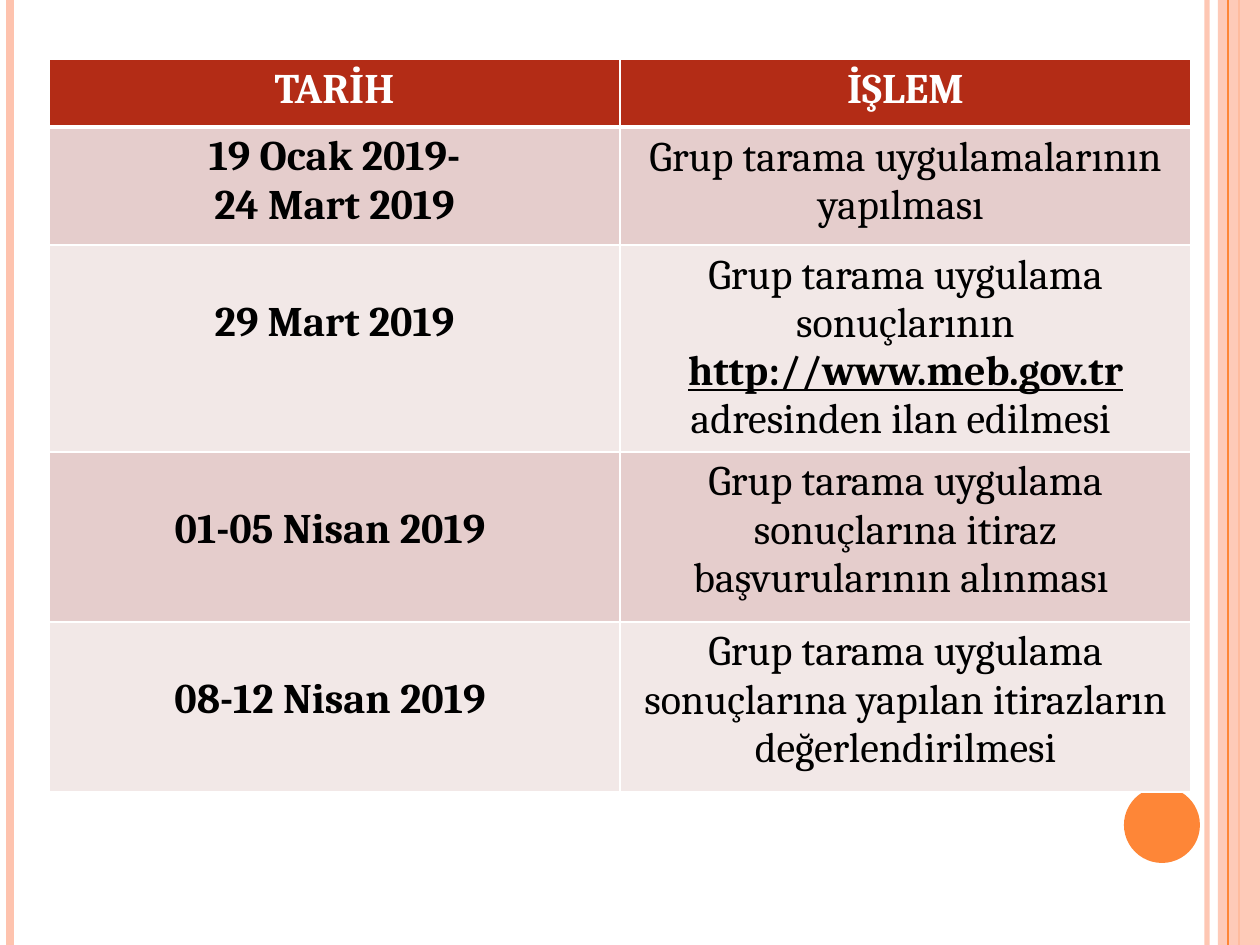
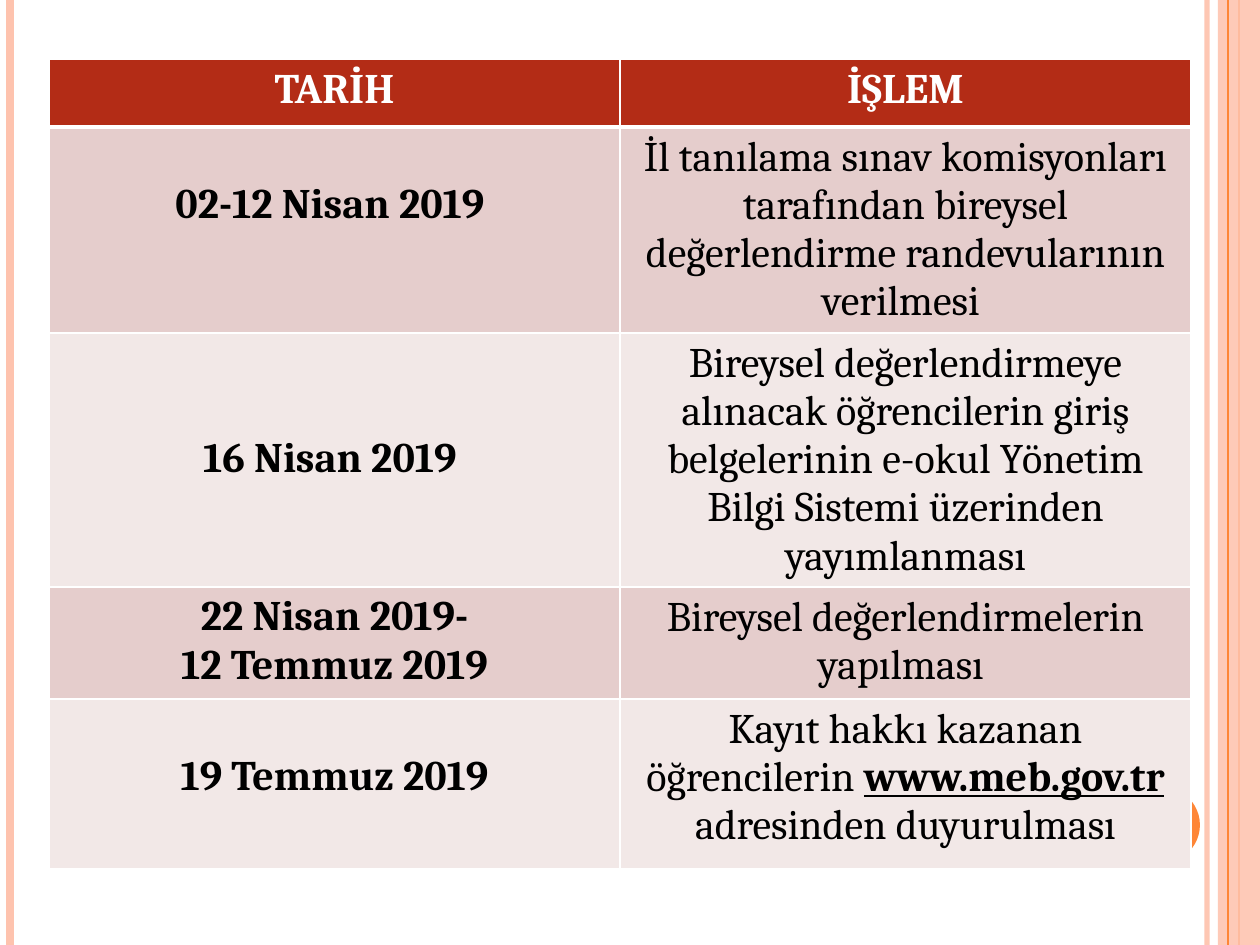
"""Build two slides that list the dates and steps of an exam calendar."""
import lxml.etree
import pptx
import pptx.dml.color
import pptx.enum.shapes
import pptx.enum.text
import pptx.oxml.ns
import pptx.util

COLORS = {
    "peach": "FEC3AE", "orange": "FE8637", "header": "B32C16",
    "dark_row": "E5CDCC", "light_row": "F2E8E7", "white": "FFFFFF", "black": "000000",
}
FONT = "Cambria"
PAGE = (0, 0, 1260, 945)
TABLE_LEFT, TABLE_TOP, TABLE_WIDTH = 49, 59, 1142
HEADER_HEIGHT, LINE_HEIGHT, CELL_MARGIN = 68, 48, 6
HEADINGS = ("TARİH", "İŞLEM")

# Each row: height, lines left free above the date, date lines, pieces of the step (the second is a link).
SCREENING = [
    (118, 0, ["19 Ocak 2019-", "24 Mart 2019"], ["Grup tarama uygulamalarının yapılması "]),
    (207, 1, ["29 Mart 2019"],
     ["Grup tarama uygulama sonuçlarının ", "http://www.meb.gov.tr ", "adresinden ilan edilmesi "]),
    (170, 1, ["01-05 Nisan 2019 "],
     ["Grup tarama uygulama sonuçlarına itiraz başvurularının alınması "]),
    (170, 1, ["08-12 Nisan 2019 "],
     ["Grup tarama uygulama sonuçlarına yapılan itirazların değerlendirilmesi"]),
]
ASSESSMENT = [
    (206, 1, ["02-12 Nisan 2019 "],
     ["İl tanılama sınav komisyonları tarafından bireysel değerlendirme randevularının verilmesi "]),
    (254, 2, ["16 Nisan 2019 "],
     ["Bireysel değerlendirmeye alınacak öğrencilerin giriş belgelerinin e-okul Yönetim "
      "Bilgi Sistemi üzerinden yayımlanması"]),
    (112, 0, ["22 Nisan 2019-", "12 Temmuz 2019"], ["Bireysel değerlendirmelerin yapılması "]),
    (170, 1, ["19 Temmuz 2019"],
     ["Kayıt hakkı kazanan öğrencilerin ", "www.meb.gov.tr ", "adresinden duyurulması"]),
]


def px(length):
    """Turn pixels into EMU."""
    return pptx.util.Emu(round(length * 914400 / 126))


def rgb(name):
    """Look up a named colour."""
    return pptx.dml.color.RGBColor.from_string(COLORS[name])


def sub(parent, tag, **attributes):
    """Append a DrawingML element."""
    return lxml.etree.SubElement(parent, pptx.oxml.ns.qn(tag), attributes)


def set_alpha(shape, percent):
    """Make the colour of a shape or line partly transparent."""
    color = next(shape._element.spPr.iter(pptx.oxml.ns.qn("a:srgbClr")))
    sub(color, "a:alpha", val=str(percent * 1000))


def add_stripe(page, box, x, color, width):
    """Draw a vertical line over the height of the box."""
    left, top, _, height = box
    stripe = page.shapes.add_connector(
        pptx.enum.shapes.MSO_CONNECTOR.STRAIGHT,
        px(left + x), px(top), px(left + x), px(top + height))
    stripe.line.color.rgb = rgb(color)
    stripe.line.width = pptx.util.Pt(width)
    sub(stripe._element.spPr, "a:effectLst")
    return stripe


def add_plain_shape(page, kind, box, color):
    """Draw a filled shape without outline or shadow."""
    shape = page.shapes.add_shape(kind, *map(px, box))
    shape.shadow.inherit = False
    shape.fill.solid()
    shape.fill.fore_color.rgb = rgb(color)
    shape.line.fill.background()
    return shape


def add_frame(page, box):
    """Draw the side stripes, the right band and the ball."""
    left, top, width, height = box
    kinds = pptx.enum.shapes.MSO_SHAPE
    set_alpha(add_stripe(page, box, 1207, "peach", 3), 93)
    add_stripe(page, box, 10, "peach", 4.5)
    add_stripe(page, box, 1239, "orange", 1.5)
    band = add_plain_shape(page, kinds.RECTANGLE, (left + width - 42, top, 42, height), "peach")
    set_alpha(band, 87)
    add_stripe(page, box, 1228, "orange", 0.75)
    add_plain_shape(page, kinds.OVAL, (left + 1124, top + 787, 76, 76), "orange")


def style_cell(cell, fill, top_line=1, bottom_line=1):
    """Set the white borders and the fill of a cell."""
    properties = cell._tc.get_or_add_tcPr()
    widths = {"a:lnL": 1, "a:lnR": 1, "a:lnT": top_line, "a:lnB": bottom_line}
    for tag, width in widths.items():
        border = sub(properties, tag, w=str(pptx.util.Pt(width)))
        sub(sub(border, "a:solidFill"), "a:srgbClr", val=COLORS["white"])
    cell.fill.solid()
    cell.fill.fore_color.rgb = rgb(fill)


def set_font(font, color, bold):
    """Apply the table font."""
    font.name = FONT
    font.size = pptx.util.Pt(24)
    font.color.rgb = rgb(color)
    font.bold = bold


def write_lines(cell, lines, color):
    """Write bold centred paragraphs."""
    frame = cell.text_frame
    frame.text = "\n".join(lines)
    for para in frame.paragraphs:
        para.alignment = pptx.enum.text.PP_ALIGN.CENTER
        set_font(para.font, color, True)


def write_step(cell, pieces):
    """Write a centred paragraph whose second piece is an underlined address."""
    para = cell.text_frame.paragraphs[0]
    para.alignment = pptx.enum.text.PP_ALIGN.CENTER
    set_font(para.font, "black", False)
    for index, piece in enumerate(pieces):
        span = para.add_run()
        span.text = piece
        if index == 1:
            span.font.bold = True
            span.font.underline = True


def add_calendar(page, left, top, width, entries):
    """Draw the table of dates and steps."""
    heights = [HEADER_HEIGHT] + [entry[0] for entry in entries]
    table = page.shapes.add_table(
        len(heights), 2, px(left), px(top), px(width), px(sum(heights))).table
    for row, height in zip(table.rows, heights):
        row.height = px(height)
    for column, heading in enumerate(HEADINGS):
        cell = table.cell(0, column)
        style_cell(cell, "header", bottom_line=3)
        write_lines(cell, [heading], "white")
    for row, (_, free_lines, dates, pieces) in enumerate(entries, start=1):
        date_cell, step_cell = table.cell(row, 0), table.cell(row, 1)
        for cell in (date_cell, step_cell):
            style_cell(cell, "dark_row" if row % 2 else "light_row", top_line=3 if row == 1 else 1)
        date_cell.margin_top = px(CELL_MARGIN + free_lines * LINE_HEIGHT)
        write_lines(date_cell, dates, "black")
        write_step(step_cell, pieces)


def main():
    """Build and save the deck."""
    deck = pptx.Presentation()
    deck.slide_width, deck.slide_height = px(PAGE[2]), px(PAGE[3])
    for entries in (SCREENING, ASSESSMENT):
        page = deck.slides.add_slide(deck.slide_layouts[6])
        add_frame(page, PAGE)
        add_calendar(page, TABLE_LEFT, TABLE_TOP, TABLE_WIDTH, entries)
    deck.save("out.pptx")


if __name__ == "__main__":
    main()
